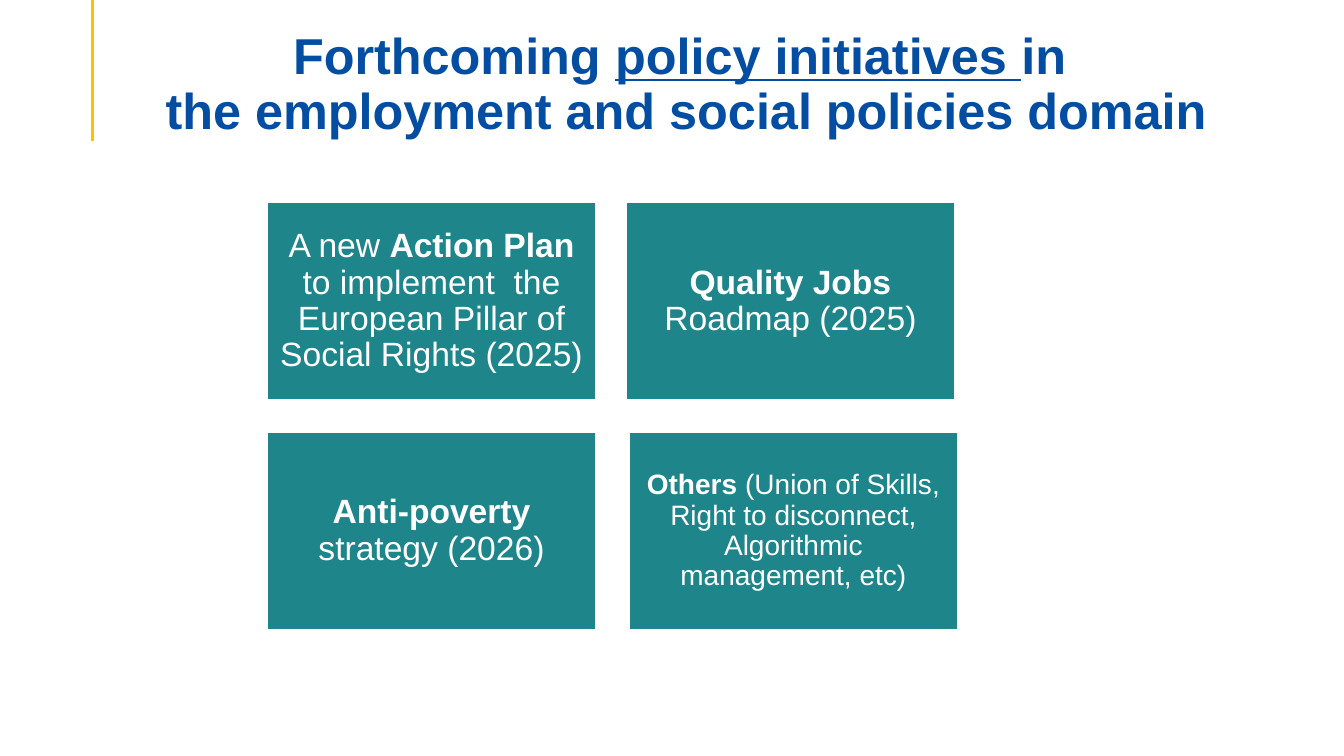
from dataclasses import dataclass

from lxml.etree import SubElement
from pptx import Presentation
from pptx.dml.color import RGBColor as Rgb
from pptx.enum.shapes import MSO_CONNECTOR as Link, MSO_SHAPE as Form
from pptx.enum.text import MSO_ANCHOR as Anchor, PP_ALIGN as Align
from pptx.oxml.ns import qn
from pptx.slide import Slide
from pptx.text.text import TextFrame, _Paragraph as Para
from pptx.util import Inches, Pt


@dataclass(frozen=True)
class Theme:
    font: str = "Arial"
    blue: Rgb = Rgb(0x03, 0x4E, 0xA2)
    teal: Rgb = Rgb(0x1E, 0x85, 0x8B)
    gold: Rgb = Rgb(0xFF, 0xC0, 0x00)
    white: Rgb = Rgb(0xFF, 0xFF, 0xFF)
    title: int = 36
    body: int = 24
    small: int = 20


@dataclass(frozen=True)
class Card:
    left: float
    top: float
    runs: tuple[tuple[str, bool], ...]
    size: int
    inset: float = 0.1


THEME = Theme()
WIDTH, HEIGHT = 3.26, 1.96
LEFT, TOP, LOWER = 2.65, 2.01, 4.29
CARDS = (
    Card(LEFT, TOP, (
        ("A new ", False),
        ("Action Plan ", True),
        ("to implement  the European Pillar of Social Rights (2025)", False),
    ), THEME.body),
    Card(6.21, TOP, (("Quality Jobs ", True), ("Roadmap (2025)", False)), THEME.body),
    Card(LEFT, LOWER, (("Anti-poverty ", True), ("strategy (2026)", False)), THEME.body),
    Card(6.24, LOWER, (
        ("Others", True),
        (" (Union of Skills, Right to disconnect, Algorithmic management, etc)", False),
    ), THEME.small, 0.08),
)


def set_text(frame: TextFrame, anchor: Anchor, size: int, color: Rgb) -> Para:
    frame.word_wrap = True
    frame.vertical_anchor = anchor
    para = frame.paragraphs[0]
    para.alignment = Align.CENTER
    para.line_spacing = 0.9
    para.font.name = THEME.font
    para.font.size = Pt(size)
    para.font.color.rgb = color
    return para


def add_rule(slide: Slide) -> None:
    rule = slide.shapes.add_connector(
        Link.STRAIGHT, Inches(0.92), 0, Inches(0.92), Inches(1.4))
    rule.line.color.rgb = THEME.gold
    rule.line.width = Pt(2.25)
    SubElement(rule._element.spPr, qn("a:effectLst"))


def add_title(slide: Slide) -> None:
    box = slide.shapes.add_textbox(
        Inches(1.06), Inches(0.53), Inches(11.5), Inches(0.86))
    frame = box.text_frame
    frame.margin_bottom = 0
    para = set_text(frame, Anchor.BOTTOM, THEME.title, THEME.blue)
    para.font.bold = True
    para.add_run().text = "Forthcoming "
    key = para.add_run()
    key.text = "policy initiatives "
    key.font.underline = True
    para.add_run().text = "in "
    para.add_line_break()
    para.add_run().text = "the employment and social policies domain"


def add_card(slide: Slide, card: Card) -> None:
    box = slide.shapes.add_shape(
        Form.RECTANGLE, Inches(card.left), Inches(card.top),
        Inches(WIDTH), Inches(HEIGHT))
    box.shadow.inherit = False
    box.fill.solid()
    box.fill.fore_color.rgb = THEME.teal
    box.line.color.rgb = THEME.white
    box.line.width = Pt(1)
    frame = box.text_frame
    frame.margin_left = frame.margin_right = Inches(card.inset)
    frame.margin_top = frame.margin_bottom = Inches(card.inset)
    para = set_text(frame, Anchor.MIDDLE, card.size, THEME.white)
    for text, bold in card.runs:
        run = para.add_run()
        run.text = text
        run.font.bold = bold


def main() -> None:
    deck = Presentation()
    deck.slide_width = Inches(13.33)
    deck.slide_height = Inches(7.5)
    slide = deck.slides.add_slide(deck.slide_layouts[6])
    add_rule(slide)
    add_title(slide)
    for card in CARDS:
        add_card(slide, card)
    deck.save("out.pptx")


if __name__ == "__main__":
    main()
